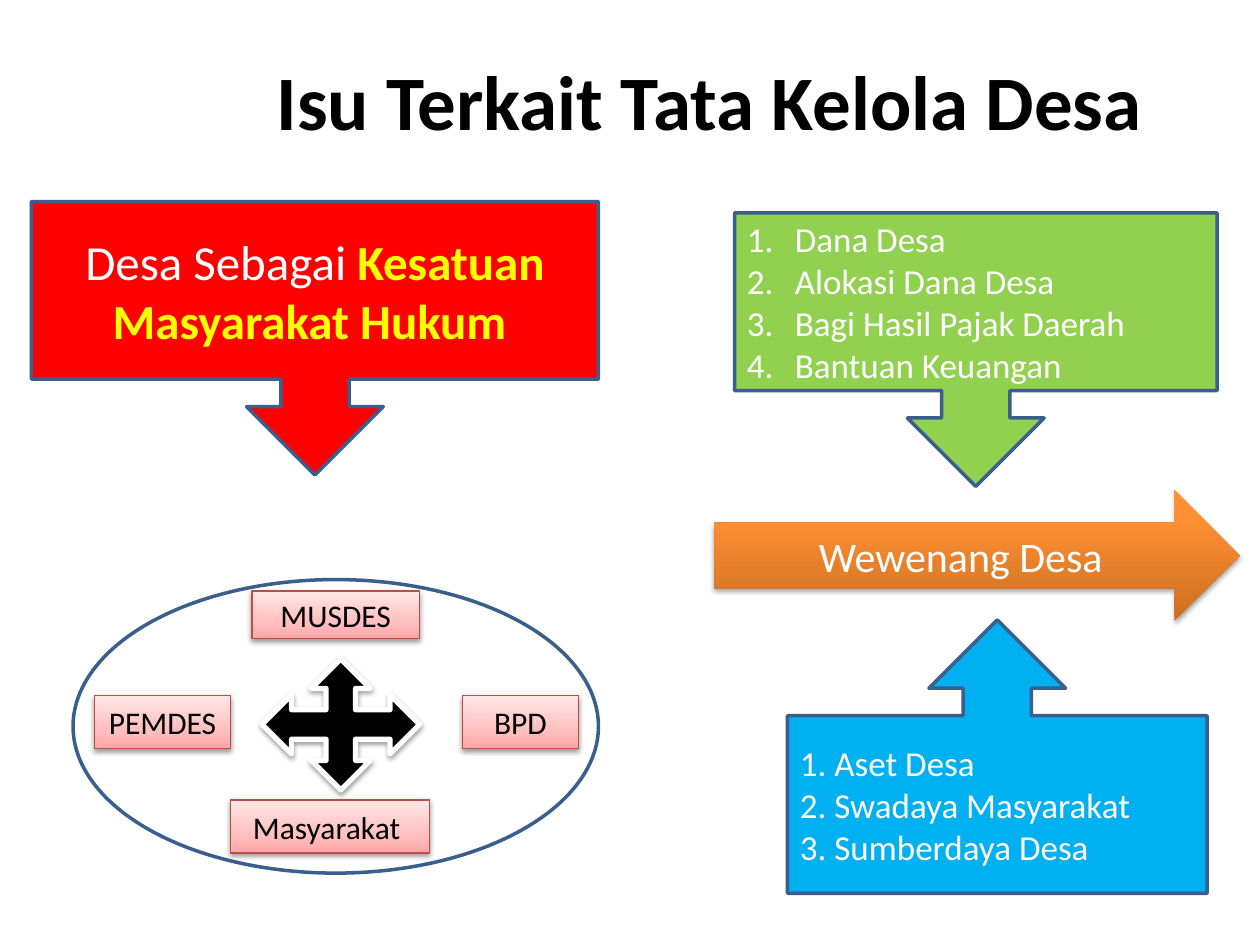
from pptx import Presentation
from pptx import util as u
from pptx.dml.color import RGBColor
from pptx.enum import shapes, text
from pptx.oxml import parse_xml
from pptx.oxml.ns import nsdecls

S, A = shapes.MSO_SHAPE, text.PP_ALIGN
TITLE = "Isu Terkait Tata Kelola Desa "
ISSUE = [[("Desa Sebagai ", "FFFFFF", False),
          ("Kesatuan Masyarakat Hukum ", "FFFF00", True)]]
FUNDS = ["Dana Desa ", "Alokasi Dana Desa", "Bagi Hasil Pajak Daerah ", "Bantuan Keuangan "]
ASSETS = ["1. Aset Desa", "2. Swadaya Masyarakat", "3. Sumberdaya Desa"]
POWER = ["Wewenang Desa"]
ACTORS = [("MUSDES", 2, 4.69, 1.33, 0.38), ("Masyarakat ", 1.83, 6.35, 1.58, 0.42),
          ("PEMDES", 0.75, 5.52, 1.08, 0.42), ("BPD", 3.67, 5.52, 0.92, 0.42)]
ORANGE = [(0, "CC6E20"), (80, "FF9034"), (100, "FF9136")]
PINK = [(0, "FFA6A5"), (35, "FFC0BF"), (100, "FFE7E7")]
EDGE = ("3A5F8C", 2)
SOFT = (38, 1.6)
FUND_H = 2.17  # height shared by the three callouts


def rgb(code):
    return RGBColor.from_string(code)


def style(font, size, color, bold=False):
    look = {"name": "Calibri", "size": u.Pt(size), "bold": bold}
    for key, value in look.items():
        setattr(font, key, value)
    font.color.rgb = rgb(color)


def blend(fill, stops):
    """Fill from bottom to top with (percent, colour) stops."""
    fill.gradient()
    fill.gradient_angle = 90
    items = fill._fill._gradFill.gsLst
    for old in list(items):
        items.remove(old)
    for pos, code in stops:
        items.append(parse_xml(
            f'<a:gs {nsdecls("a")} pos="{pos * 1000}"><a:srgbClr val="{code}"/></a:gs>'))


def cast(shape, alpha, dist):
    """Drop a black shadow straight down."""
    shape._element.spPr.find(".//{*}effectLst").append(parse_xml(
        f'<a:outerShdw {nsdecls("a")} blurRad="{u.Pt(3.1)}" dist="{u.Pt(dist)}" '
        f'dir="5400000" rotWithShape="0"><a:srgbClr val="000000">'
        f'<a:alpha val="{alpha * 1000}"/></a:srgbClr></a:outerShdw>'))


def draw(slide, kind, box, fill, line=None, shade=None):
    shape = slide.shapes.add_shape(kind, *map(u.Inches, box))
    shape.shadow.inherit = False
    if isinstance(fill, str):
        shape.fill.solid()
        shape.fill.fore_color.rgb = rgb(fill)
    else:
        blend(shape.fill, fill)
    if line:
        shape.line.color.rgb = rgb(line[0])
        shape.line.width = u.Pt(line[1])
    else:
        shape.line.fill.background()
    if shade:
        cast(shape, *shade)
    return shape


def write(shape, lines, size, color="FFFFFF", align=A.CENTER, number=False):
    frame = shape.text_frame
    frame.word_wrap = True
    frame.vertical_anchor = text.MSO_ANCHOR.MIDDLE
    for i, line in enumerate(lines):
        para = frame.add_paragraph() if i else frame.paragraphs[0]
        para.alignment = align
        if number:
            props = para._p.get_or_add_pPr()
            props.set("marL", str(u.Inches(0.38)))
            props.set("indent", str(u.Inches(-0.38)))
            props.append(parse_xml(f'<a:buAutoNum {nsdecls("a")} type="arabicPeriod"/>'))
        for words, tint, bold in [(line, color, False)] if isinstance(line, str) else line:
            run = para.add_run()
            run.text = words
            style(run.font, size, tint, bold)


def main():
    deck = Presentation()
    deck.slide_width, deck.slide_height = u.Inches(10), u.Inches(7.5)
    slide = deck.slides.add_slide(deck.slide_layouts[5])

    title = slide.shapes.title
    for key, value in zip(("left", "top", "width", "height"), (0.69, 0.45, 8.62, 0.77)):
        setattr(title, key, u.Inches(value))
    write(title, [[(TITLE, "000000", True)]], 44, align=A.RIGHT)
    title.text_frame.paragraphs[0].line_spacing = 0.9

    down, up = S.DOWN_ARROW_CALLOUT, S.UP_ARROW_CALLOUT
    issue = draw(slide, down, (0.25, 1.6, 4.5, FUND_H), "FF0000", EDGE)
    write(issue, ISSUE, 28)
    funds = draw(slide, down, (5.83, 1.69, 3.83, FUND_H), "92D050", EDGE)
    write(funds, FUNDS, 20, align=A.JUSTIFY, number=True)
    assets = draw(slide, up, (6.25, 4.92, 3.33, FUND_H), "00B0F0", EDGE)
    write(assets, ASSETS, 20, align=A.JUSTIFY)
    power = draw(slide, S.RIGHT_ARROW, (5.67, 3.89, 4.17, 1.04), ORANGE, shade=(35, 1.8))
    write(power, POWER, 24)

    draw(slide, S.OVAL, (0.58, 4.6, 4.17, 2.33), "FFFFFF", EDGE)
    for name, *box in ACTORS:
        actor = draw(slide, S.RECTANGLE, box, PINK, ("BF4C48", 0.75), SOFT)
        write(actor, [name], 18, "000000")
    draw(slide, S.QUAD_ARROW, (2.08, 5.23, 1.25, 1.04), "000000", ("FFFFFF", 3), SOFT)

    deck.save("out.pptx")


if __name__ == "__main__":
    main()
